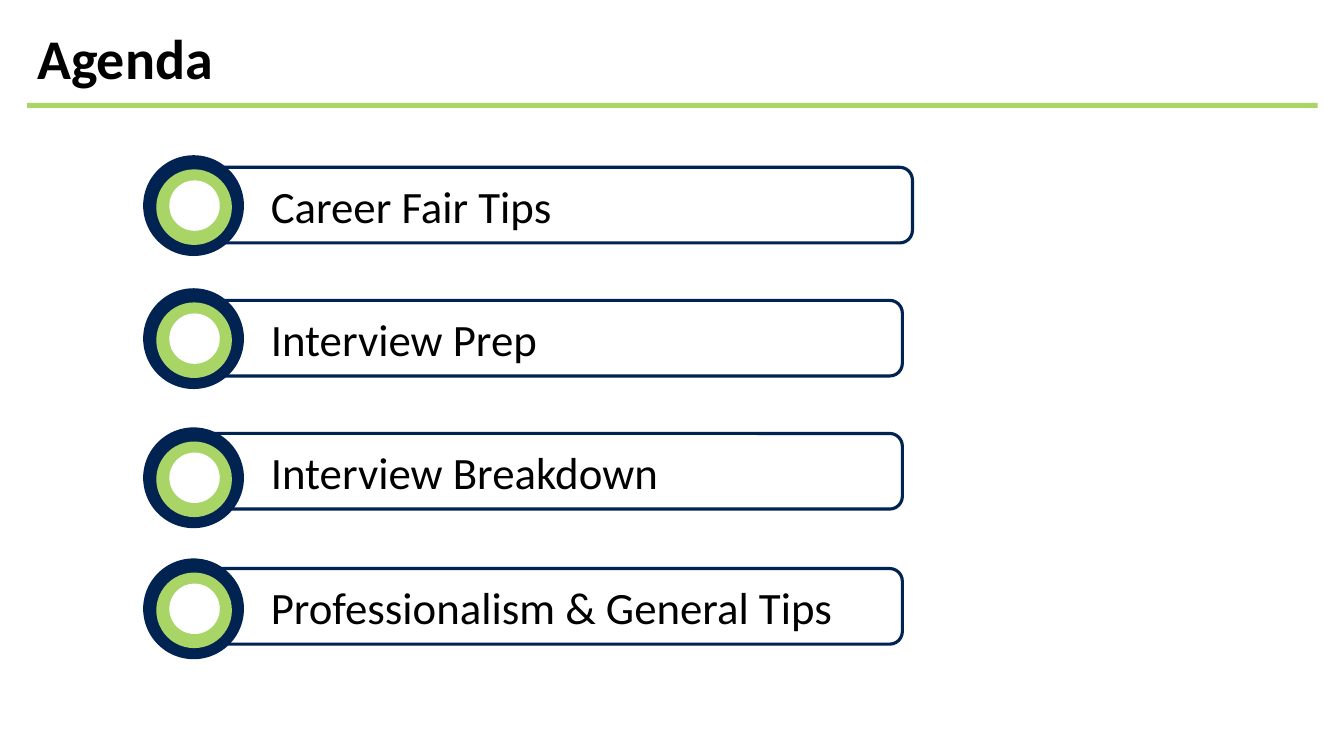
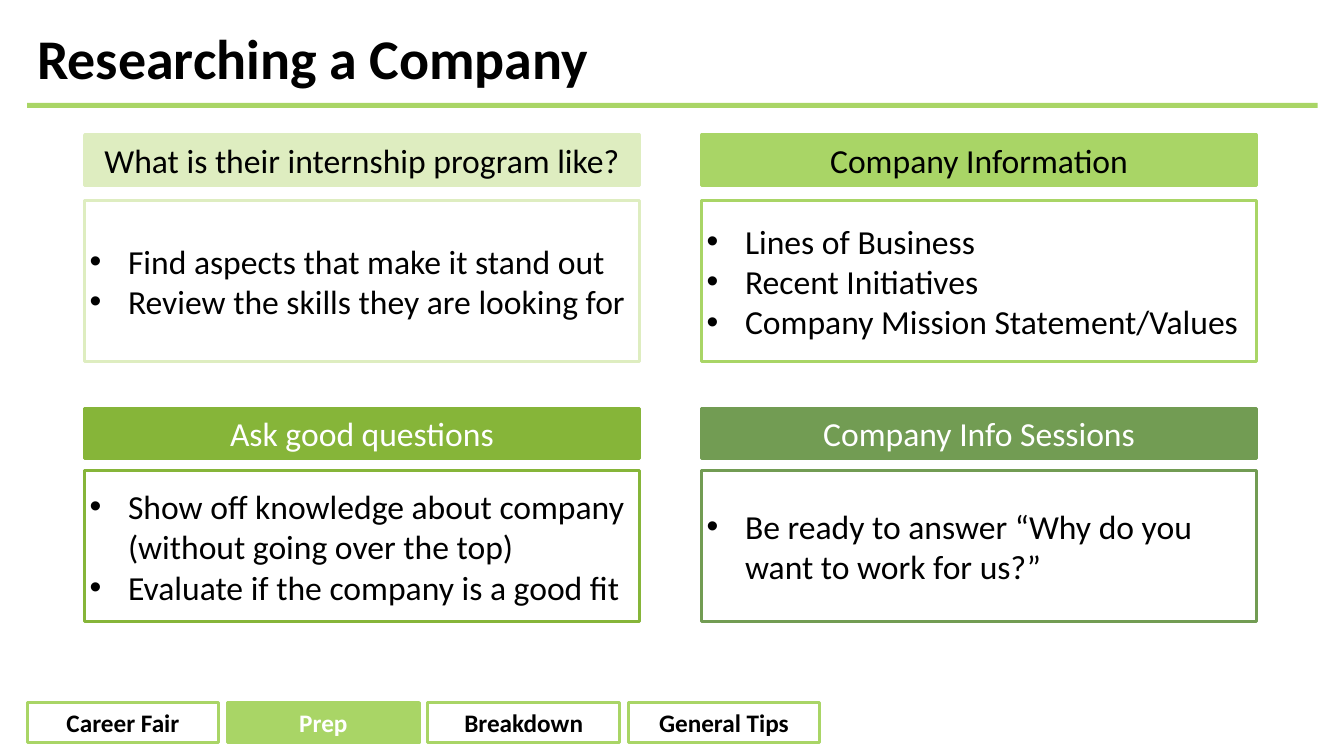
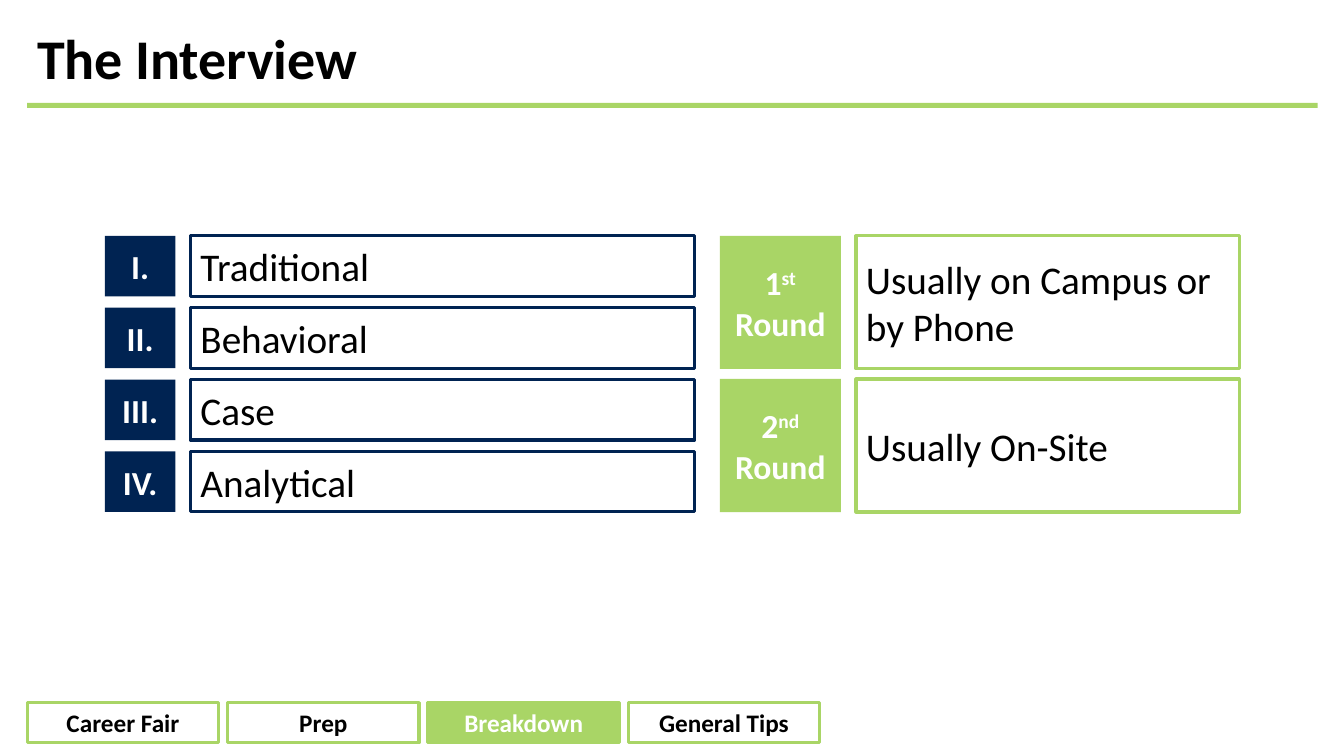
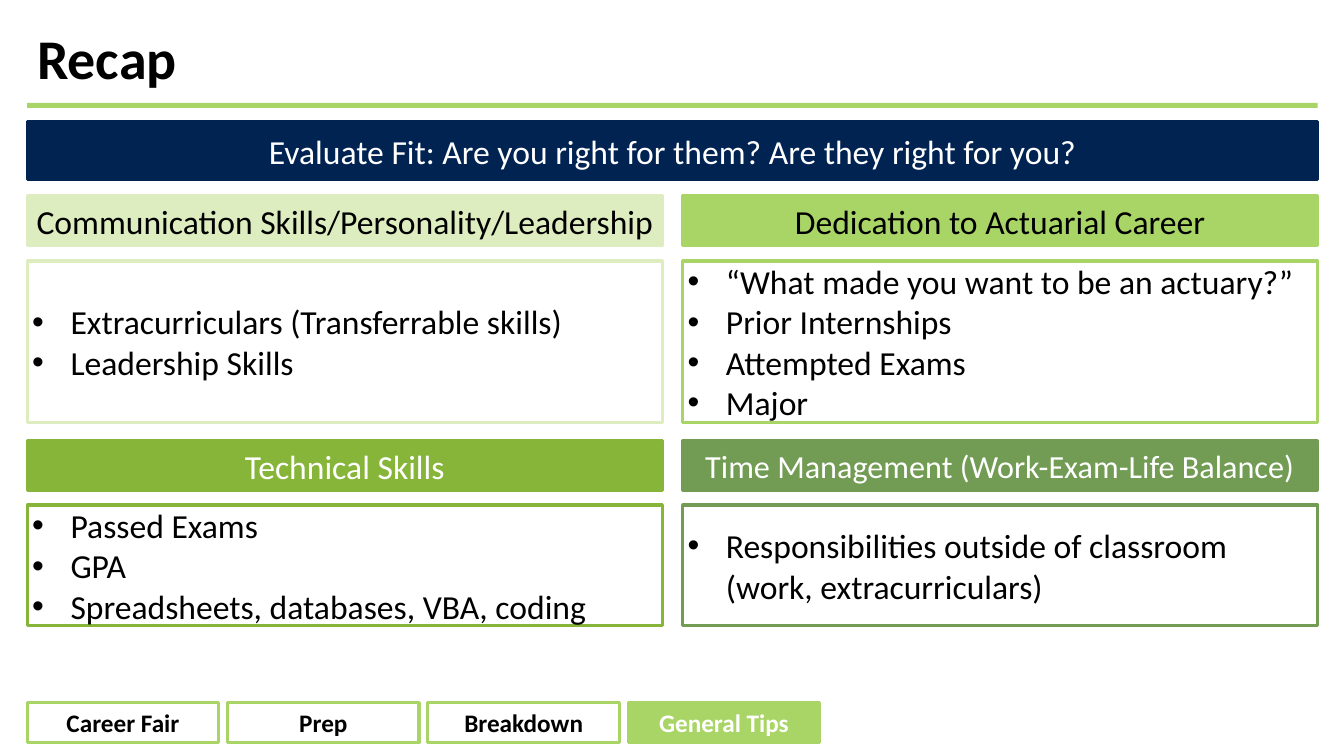
"""Build four slides of career fair and interview advice."""
import dataclasses

import lxml.etree
import pptx
import pptx.dml.color
import pptx.enum.shapes
import pptx.enum.text
import pptx.oxml.ns
import pptx.util

Inches = pptx.util.Inches
Shape = pptx.enum.shapes.MSO_SHAPE
Align = pptx.enum.text.PP_ALIGN


@dataclasses.dataclass(frozen=True)
class Theme:
    font: str = "Calibri"
    black: str = "000000"
    white: str = "FFFFFF"
    navy: str = "002352"
    green: str = "A9D566"
    pale: str = "DEEDC0"
    leaf: str = "86B539"
    moss: str = "729C53"
    title: int = 40
    agenda: int = 32
    label: int = 28
    body: int = 24
    tight: int = 23
    tab: int = 18
    border: float = 2.25


theme = Theme()


def add_box(slide, place, paragraphs=(), fill=None, line=None, kind=Shape.RECTANGLE,
            size=theme.body, color=theme.black, bold=False, align=Align.CENTER,
            inset=0.1, bullets=False, spacing=None):
    """Add a shape with text; parts between ^ marks are superscript."""
    box = slide.shapes.add_shape(kind, *map(Inches, place))
    box.shadow.inherit = False
    if fill:
        box.fill.solid()
        box.fill.fore_color.rgb = pptx.dml.color.RGBColor.from_string(fill)
    else:
        box.fill.background()
    if line:
        box.line.color.rgb = pptx.dml.color.RGBColor.from_string(line)
        box.line.width = pptx.util.Pt(theme.border)
    else:
        box.line.fill.background()
    frame = box.text_frame
    frame.word_wrap = True
    frame.vertical_anchor = pptx.enum.text.MSO_ANCHOR.MIDDLE
    frame.margin_left = Inches(inset)
    frame.margin_right = Inches(min(inset, 0.1))
    frame.margin_top = frame.margin_bottom = Inches(0.05)
    for index, text in enumerate(paragraphs):
        para = frame.add_paragraph() if index else frame.paragraphs[0]
        para.alignment = align
        if spacing:
            para.line_spacing = spacing
        if bullets:
            properties = para._p.get_or_add_pPr()
            properties.set("marL", str(Inches(0.38)))
            properties.set("indent", str(-Inches(0.38)))
            for tag, name, value in (("a:buFont", "typeface", "Arial"), ("a:buChar", "char", "•")):
                mark = lxml.etree.SubElement(properties, pptx.oxml.ns.qn(tag))
                mark.set(name, value)
        for position, part in enumerate(text.split("^")):
            span = para.add_run()
            span.text = part
            span.font.name = theme.font
            span.font.size = pptx.util.Pt(size)
            span.font.bold = bold
            span.font.color.rgb = pptx.dml.color.RGBColor.from_string(color)
            if position % 2:
                span.font._element.set("baseline", "30000")
    return box


deck = pptx.Presentation()
deck.slide_width = Inches(13.33)
deck.slide_height = Inches(7.5)

tabs = ["Career Fair", "Prep", "Breakdown", "General Tips"]
pages = []
for title, active in [("Agenda", None), ("Researching a Company", "Prep"),
                      ("The Interview", "Breakdown"), ("Recap", "General Tips")]:
    page = deck.slides.add_slide(deck.slide_layouts[6])
    pages.append(page)
    add_box(page, (0.27, 1.02, 12.8, 0.05), fill=theme.green)
    add_box(page, (0.27, 0.19, 12.8, 0.83), [title], size=theme.title, bold=True,
            align=Align.LEFT, spacing=0.9)
    for column, tab in enumerate(tabs if active else []):
        chosen = tab == active
        add_box(page, (0.27 + 1.987 * column, 6.97, 1.9, 0.4), [tab],
                fill=theme.green if chosen else theme.white, line=theme.green,
                size=theme.tab, color=theme.white if chosen else theme.black, bold=True)
agenda, research, interview, recap = pages

for topic, bar_top, ring_top, bar_width in [
        ("Career Fair Tips", 1.66, 1.54, 7.2),
        ("Interview Prep", 2.98, 2.86, 7.1),
        ("Interview Breakdown", 4.3, 4.24, 7.1),
        ("Professionalism & General Tips", 5.64, 5.54, 7.1)]:
    add_box(agenda, (1.85, bar_top, bar_width, 0.75), [topic], line=theme.navy,
            kind=Shape.ROUNDED_RECTANGLE, size=theme.agenda, align=Align.LEFT, inset=0.8)
    for across, down, diameter, fill in [(0, 0, 1, theme.navy), (0.13, 0.14, 0.75, theme.green),
                                         (0.26, 0.25, 0.5, theme.white)]:
        add_box(agenda, (1.42 + across, ring_top + down, diameter, diameter),
                fill=fill, kind=Shape.OVAL)

add_box(recap, (0.27, 1.21, 12.8, 0.57),
        ["Evaluate Fit: Are you right for them? Are they right for you?"],
        fill=theme.navy, line=theme.navy, color=theme.white)

card_styles = [(theme.pale, theme.black), (theme.green, theme.black),
               (theme.leaf, theme.white), (theme.moss, theme.white)]
card_pages = [
    (research, (0.84, 6.96), 5.5, [(1.34, 1.99, 1.6), (4.05, 4.67, 1.5)], [
        ("What is their internship program like?", theme.body,
         ["Find aspects that make it stand out", "Review the skills they are looking for"]),
        ("Company Information", theme.body,
         ["Lines of Business", "Recent Initiatives", "Company Mission Statement/Values"]),
        ("Ask good questions", theme.body,
         ["Show off knowledge about company (without going over the top)",
          "Evaluate if the company is a good fit"]),
        ("Company Info Sessions", theme.body,
         ["Be ready to answer “Why do you want to work for us?”"])]),
    (recap, (0.27, 6.77), 6.3, [(1.94, 2.59, 1.6), (4.37, 5.01, 1.2)], [
        ("Communication Skills/Personality/Leadership", theme.body,
         ["Extracurriculars (Transferrable skills)", "Leadership Skills"]),
        ("Dedication to Actuarial Career", theme.body,
         ["“What made you want to be an actuary?”", "Prior Internships",
          "Attempted Exams", "Major"]),
        ("Technical Skills", theme.body,
         ["Passed Exams", "GPA", "Spreadsheets, databases, VBA, coding"]),
        ("Time Management (Work-Exam-Life Balance)", theme.tight,
         ["Responsibilities outside of classroom (work, extracurriculars)"])]),
]
for page, lefts, width, rows, cards in card_pages:
    for index, (heading, size, points) in enumerate(cards):
        left = lefts[index % 2]
        heading_top, body_top, body_height = rows[index // 2]
        shade, ink = card_styles[index]
        add_box(page, (left, heading_top, width, 0.5), [heading], fill=shade, line=shade,
                size=size, color=ink, inset=0.05)
        add_box(page, (left, body_top, width, body_height), points, fill=theme.white,
                line=shade, align=Align.LEFT, inset=0.05, bullets=True)

interview_groups = [
    (theme.navy, 1.04, 0.7, 1.89, 5, 0.6, 0.713,
     [("I.", "Traditional"), ("II.", "Behavioral"), ("III.", "Case"), ("IV.", "Analytical")]),
    (theme.green, 7.14, 1.2, 8.49, 3.8, 1.32, 1.42,
     [("1^st^ Round", "Usually on Campus or by Phone"), ("2^nd^ Round", "Usually On-Site")]),
]
for shade, mark_left, mark_width, left, width, height, step, entries in interview_groups:
    for row, (mark, text) in enumerate(entries):
        top = 2.34 + step * row
        add_box(interview, (mark_left, top, mark_width, height), [mark], fill=shade,
                color=theme.white, bold=True)
        add_box(interview, (left, top, width, height), [text], fill=theme.white, line=shade,
                size=theme.label, align=Align.LEFT)

deck.save("out.pptx")
